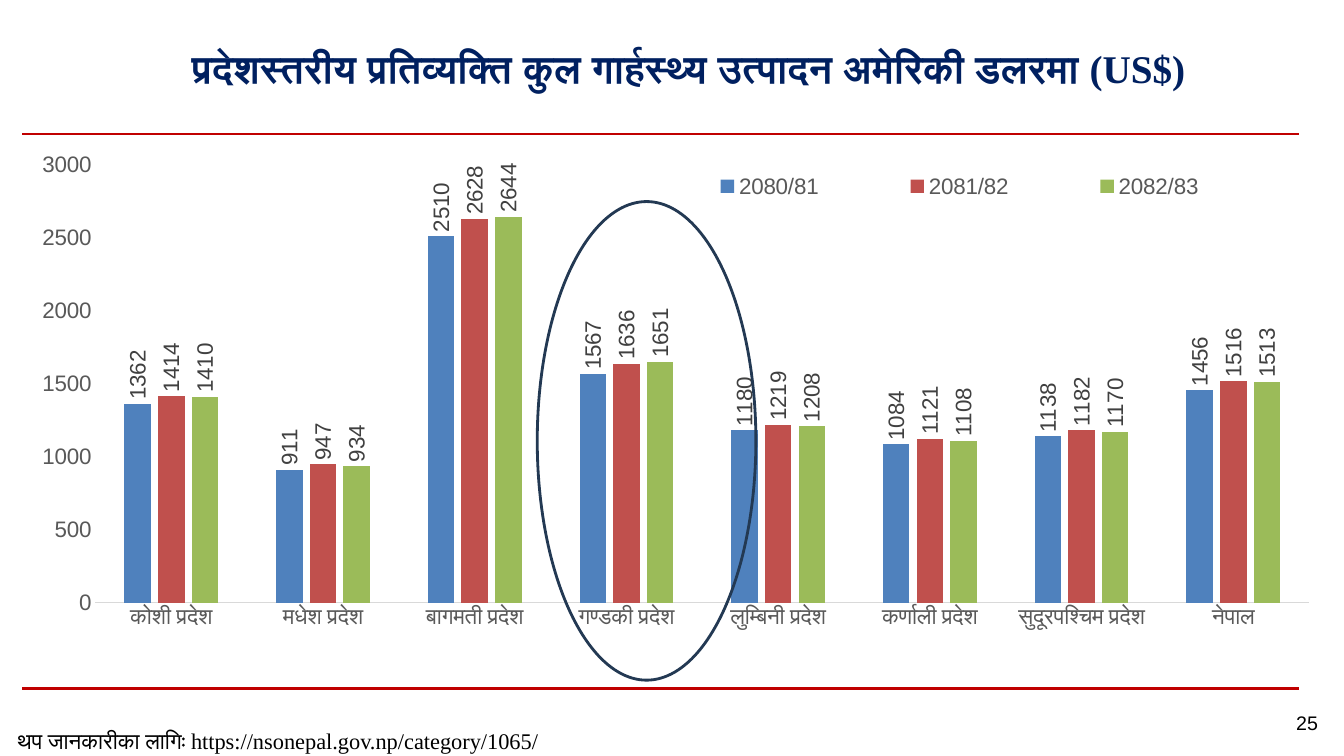
import pptx
import pptx.chart.data
import pptx.dml.color
import pptx.enum.chart
import pptx.enum.shapes
import pptx.enum.text
import pptx.oxml
import pptx.oxml.ns
import pptx.util

Cm = pptx.util.Cm
Pt = pptx.util.Pt
CHART = pptx.enum.chart
ALIGN = pptx.enum.text.PP_ALIGN
ANCHOR = pptx.enum.text.MSO_ANCHOR

GROUPS = ["कोशी प्रदेश", "मधेश प्रदेश", "बागमती प्रदेश", "गण्डकी प्रदेश",
          "लुम्बिनी प्रदेश", "कर्णाली प्रदेश", "सुदूरपश्चिम प्रदेश", "नेपाल"]
YEARS = [
    ("2080/81", "4F81BD", [1362, 911, 2510, 1567, 1180, 1084, 1138, 1456]),
    ("2081/82", "C0504D", [1414, 947, 2628, 1636, 1219, 1121, 1182, 1516]),
    ("2082/83", "9BBB59", [1410, 934, 2644, 1651, 1208, 1108, 1170, 1513]),
]


def color(code):
    return pptx.dml.color.RGBColor.from_string(code)


def apply(item, values):
    for name, value in values.items():
        setattr(item, name, value)


def style(font, size, face, code, bold=False):
    apply(font, {"size": Pt(size), "name": face, "bold": bold})
    font.color.rgb = color(code)


def stroke(line, code, width):
    line.color.rgb = color(code)
    line.width = Pt(width)


def layout(part, tag, box, inner=False):
    kids = '<c:layoutTarget val="inner"/>' if inner else ""
    kids += "".join(f'<c:{key}Mode val="edge"/>' for key in "xy")
    kids += "".join(f'<c:{key} val="{size}"/>' for key, size in zip("xywh", box))
    node = pptx.oxml.parse_xml(
        f'<c:layout {pptx.oxml.ns.nsdecls("c")}><c:manualLayout>{kids}'
        '</c:manualLayout></c:layout>')
    for old in part.findall(pptx.oxml.ns.qn("c:layout")):
        part.remove(old)
    if tag:
        part.find(pptx.oxml.ns.qn(tag)).addnext(node)
    else:
        part.insert(0, node)


def write(slide, box, text, font, align=ALIGN.LEFT, anchor=ANCHOR.TOP, space=1.0):
    frame = slide.shapes.add_textbox(*map(Cm, box)).text_frame
    apply(frame, {"word_wrap": True, "vertical_anchor": anchor})
    para = frame.paragraphs[0]
    apply(para, {"alignment": align, "line_spacing": space})
    run = para.add_run()
    run.text = text
    style(run.font, *font)


def rules(slide, box):
    left, top, width, height = box
    for level in (top, top + height):
        line = slide.shapes.add_connector(
            pptx.enum.shapes.MSO_CONNECTOR.STRAIGHT,
            Cm(left), Cm(level), Cm(left + width), Cm(level))
        stroke(line.line, "C00000", 1.5)
        props = line._element.spPr
        props.append(pptx.oxml.parse_xml(
            f'<a:effectLst {pptx.oxml.ns.nsdecls("a")}/>'))


def header(slide, box):
    write(slide, box,
          "प्रदेशस्तरीय प्रतिव्यक्ति कुल गार्हस्थ्य उत्पादन अमेरिकी डलरमा (US$)",
          (28, "Times New Roman", "002060", True),
          ALIGN.CENTER, ANCHOR.MIDDLE, 1.14)


def footer(slide, box):
    left, top, width, height = box
    write(slide, (left, top + 0.43, 15.67, height),
          "थप जानकारीका लागिः https://nsonepal.gov.np/category/1065/",
          (16, "Times New Roman", "000000"))
    write(slide, (left + width - 1.52, top, 1.52, height), "25",
          (14, "Arial", "000000"), ALIGN.CENTER)


def axes(chart):
    cat, val = chart.category_axis, chart.value_axis
    for axis, face in ((cat, "Calibri"), (val, "Arial")):
        apply(axis, {"major_tick_mark": CHART.XL_TICK_MARK.NONE,
                     "minor_tick_mark": CHART.XL_TICK_MARK.NONE,
                     "has_major_gridlines": False})
        style(axis.tick_labels.font, 16, face, "595959")
    stroke(cat.format.line, "D9D9D9", 0.75)
    val.format.line.fill.background()
    apply(val, {"minimum_scale": 0, "maximum_scale": 3000, "major_unit": 500})
    apply(val.tick_labels, {"number_format": "0", "number_format_is_linked": False})


def bars(plot):
    apply(plot, {"gap_width": 219, "overlap": -27, "vary_by_categories": False})
    for series, (_, code, _) in zip(plot.series, YEARS):
        series.format.fill.solid()
        series.format.fill.fore_color.rgb = color(code)
        labels = series.data_labels
        apply(labels, {"show_value": True, "number_format": "0",
                       "number_format_is_linked": False,
                       "position": CHART.XL_LABEL_POSITION.OUTSIDE_END})
        style(labels.font, 16, "Arial", "404040")
        body = labels._element.find(
            pptx.oxml.ns.qn("c:txPr")).find(pptx.oxml.ns.qn("a:bodyPr"))
        body.set("rot", "-5400000")
        body.set("vert", "horz")


def graph(slide, box):
    data = pptx.chart.data.CategoryChartData(number_format="0")
    data.categories = GROUPS
    for name, _, values in YEARS:
        data.add_series(name, values)
    chart = slide.shapes.add_chart(
        CHART.XL_CHART_TYPE.COLUMN_CLUSTERED, *map(Cm, box), data).chart
    apply(chart, {"has_title": False, "has_legend": True})
    style(chart.font, 16, "Calibri", "000000")
    axes(chart)
    bars(chart.plots[0])
    legend = chart.legend
    apply(legend, {"position": CHART.XL_LEGEND_POSITION.BOTTOM,
                   "include_in_layout": False})
    style(legend.font, 16, "Arial", "595959")
    layout(legend._element, "c:legendPos", (0.47, 0.04, 0.49, 0.08))
    area = chart._chartSpace.chart.plotArea
    layout(area, None, (0.06, 0.04, 0.92, 0.815), True)


def ring(slide, box):
    oval = slide.shapes.add_shape(
        pptx.enum.shapes.MSO_SHAPE.OVAL, *map(Cm, box))
    oval.shadow.inherit = False
    oval.fill.background()
    stroke(oval.line, "233953", 2)


def main():
    deck = pptx.Presentation()
    apply(deck, {"slide_width": Cm(33.87), "slide_height": Cm(19.05)})
    slide = deck.slides.add_slide(deck.slide_layouts[6])
    rules(slide, (0.56, 3.38, 32.18, 13.97))
    header(slide, (3.38, 0.64, 27.94, 1.96))
    footer(slide, (0.2, 17.78, 33.5, 0.84))
    graph(slide, (0.41, 3.61, 33.25, 13.54))
    ring(slide, (13.54, 5.08, 5.51, 12.06))
    deck.save("out.pptx")


if __name__ == "__main__":
    main()
